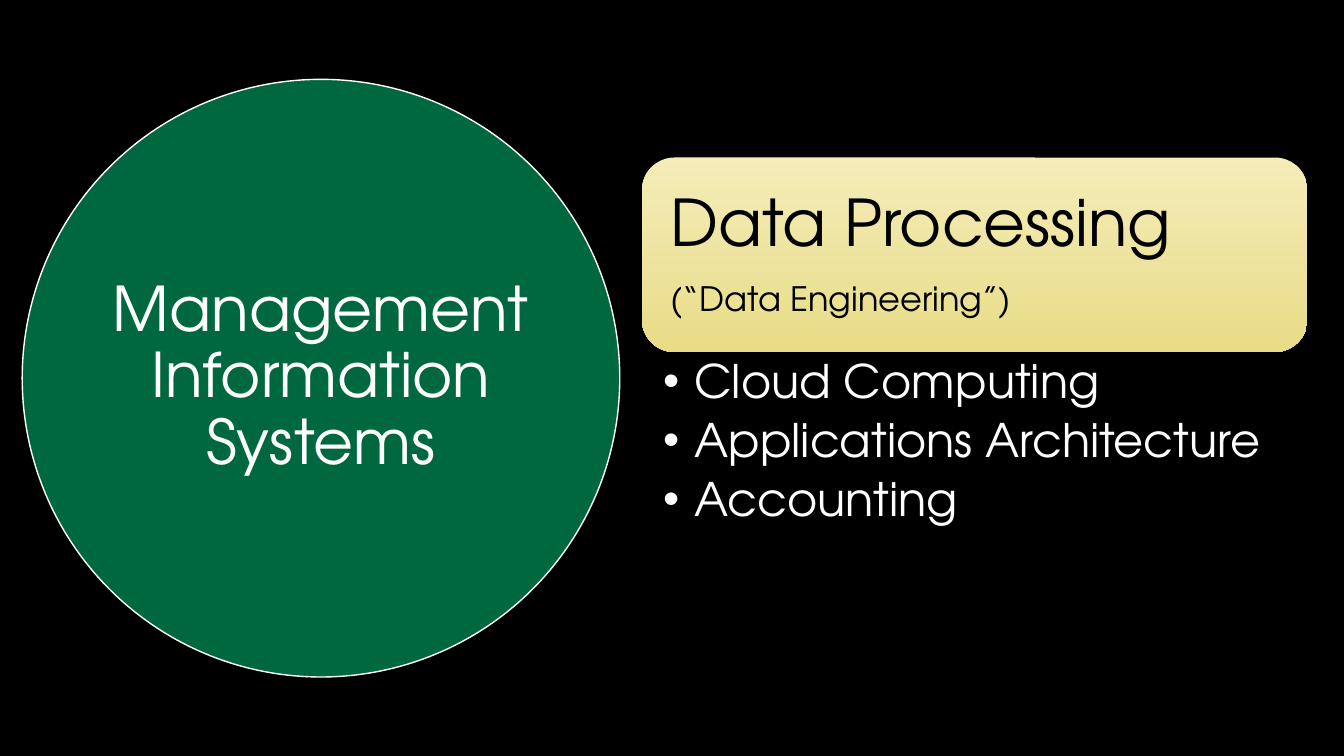
"""Build the Management Information Systems slide."""
from lxml import etree
from pptx import Presentation
from pptx.dml.color import RGBColor
from pptx.enum.shapes import MSO_SHAPE
from pptx.enum.text import MSO_ANCHOR, MSO_AUTO_SIZE, PP_ALIGN
from pptx.oxml.ns import qn
from pptx.util import Cm, Pt

OVAL, ROUNDED = MSO_SHAPE.OVAL, MSO_SHAPE.ROUNDED_RECTANGLE
TOP, MIDDLE = MSO_ANCHOR.TOP, MSO_ANCHOR.MIDDLE
LEFT, CENTER = PP_ALIGN.LEFT, PP_ALIGN.CENTER
NO_FIT = MSO_AUTO_SIZE.NONE

THEME = {
    "font": "TeX Gyre Adventor",
    "black": RGBColor.from_string("000000"),
    "white": RGBColor.from_string("FFFFFF"),
    "green": RGBColor.from_string("01D17D"),
    "pale_gold": RGBColor.from_string("F4ECB9"),
    "gold": RGBColor.from_string("E8DC87"),
    "title": 44,
    "heading": 46,
    "subheading": 24,
    "bullet": 33,
}


def set_frame(tf, anchor, left, top, right, bottom):
    tf.word_wrap = True
    tf.auto_size = NO_FIT
    tf.vertical_anchor = anchor
    tf.margin_left, tf.margin_top = Cm(left), Cm(top)
    tf.margin_right, tf.margin_bottom = Cm(right), Cm(bottom)


def format_paragraph(p, size, color, align, after):
    p.alignment = align
    p.line_spacing = 0.9
    p.space_before = Pt(0)
    p.space_after = Pt(round(size * after, 1))
    for r in p.runs:
        r.font.name = THEME["font"]
        r.font.size = Pt(size)
        r.font.color.rgb = THEME[color]


prs = Presentation()
prs.slide_width, prs.slide_height = Cm(33.87), Cm(19.05)
s = prs.slides.add_slide(prs.slide_layouts[1])
s.background.fill.solid()
s.background.fill.fore_color.rgb = THEME["black"]
title, body = s.placeholders

circle = s.shapes.add_shape(OVAL, Cm(0.56), Cm(2), Cm(15.06), Cm(15.06))
circle.shadow.inherit = False
circle.fill.solid()
circle.fill.fore_color.rgb = THEME["green"]
green = circle.element.spPr.find(qn("a:solidFill")).find(qn("a:srgbClr"))
etree.SubElement(green, qn("a:alpha"), val="50000")
circle.line.color.rgb = THEME["white"]
circle.line.width = Pt(1)
title.element.addprevious(circle.element)

title.left, title.top, title.width, title.height = Cm(2.77), Cm(4.2), Cm(10.64), Cm(10.64)
tf = title.text_frame
tf.text = "Management Information Systems"
set_frame(tf, MIDDLE, 0, 0, 0, 0)
format_paragraph(tf.paragraphs[0], THEME["title"], "white", CENTER, 0.35)

card = s.shapes.add_shape(ROUNDED, Cm(16.18), Cm(3.97), Cm(16.77), Cm(4.9))
card.shadow.inherit = False
card.fill.gradient()
card.fill.gradient_angle = 270
for stop, color in zip(card.fill.gradient_stops, ("pale_gold", "gold")):
    stop.color.rgb = THEME[color]
card.line.fill.background()
tf = card.text_frame
tf.text = "Data Processing\n(“Data Engineering”)"
set_frame(tf, MIDDLE, 0.48, 0.48, 0.48, 0.48)
for p, size in zip(tf.paragraphs, ("heading", "subheading")):
    format_paragraph(p, THEME[size], "black", LEFT, 0.35)

body.left, body.top, body.width, body.height = Cm(16.18), Cm(8.88), Cm(16.77), Cm(4.83)
tf = body.text_frame
tf.text = "Cloud Computing\nApplications Architecture\nAccounting"
set_frame(tf, TOP, 0.53, 0.15, 0.84, 0.15)
for p in tf.paragraphs:
    p.level = 1
    pPr = p._p.get_or_add_pPr()
    pPr.set("marL", str(Cm(0.79)))
    pPr.set("indent", str(-Cm(0.79)))
    etree.SubElement(pPr, qn("a:buChar"), char="•")
    format_paragraph(p, THEME["bullet"], "white", LEFT, 0.2)

prs.save("out.pptx")
